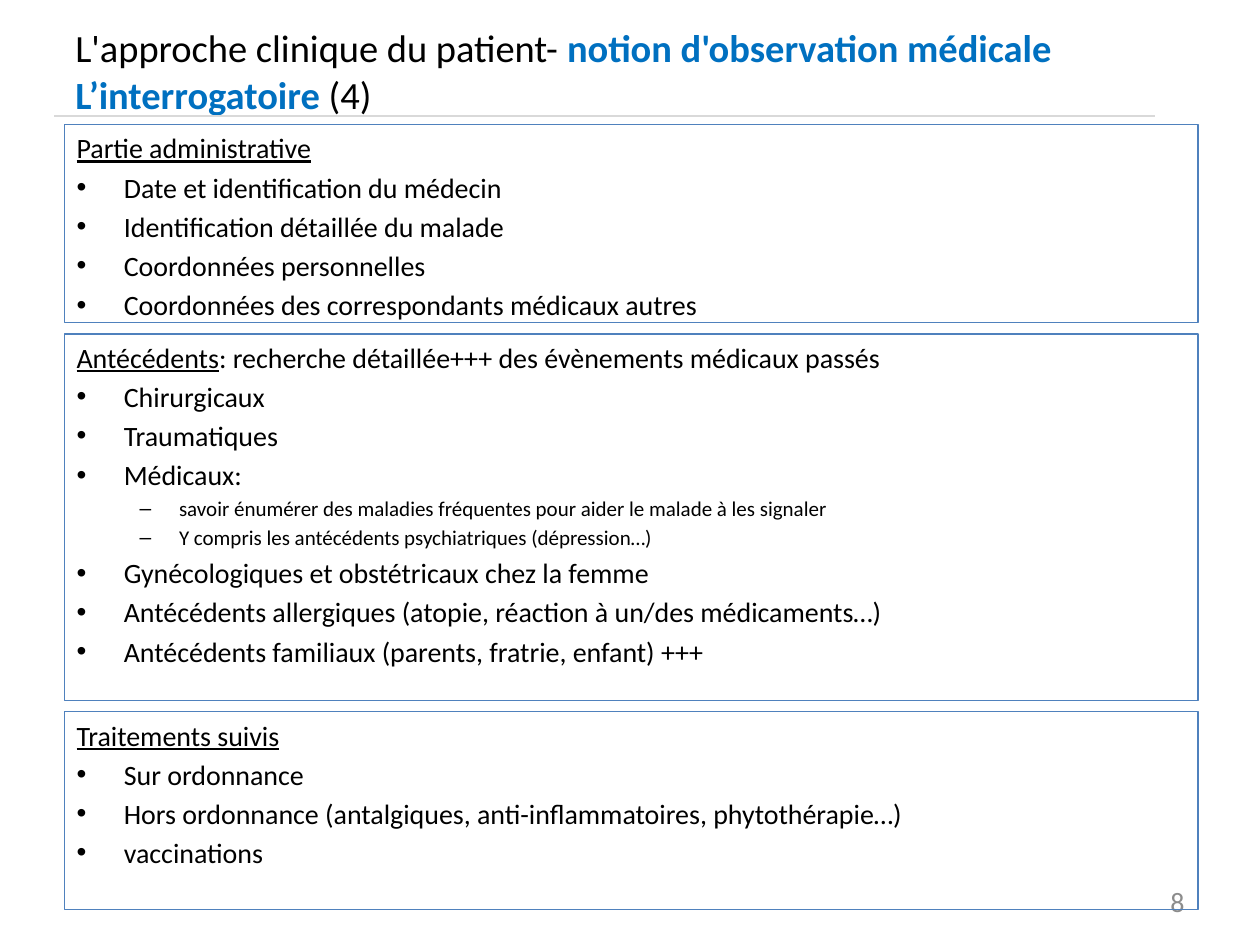
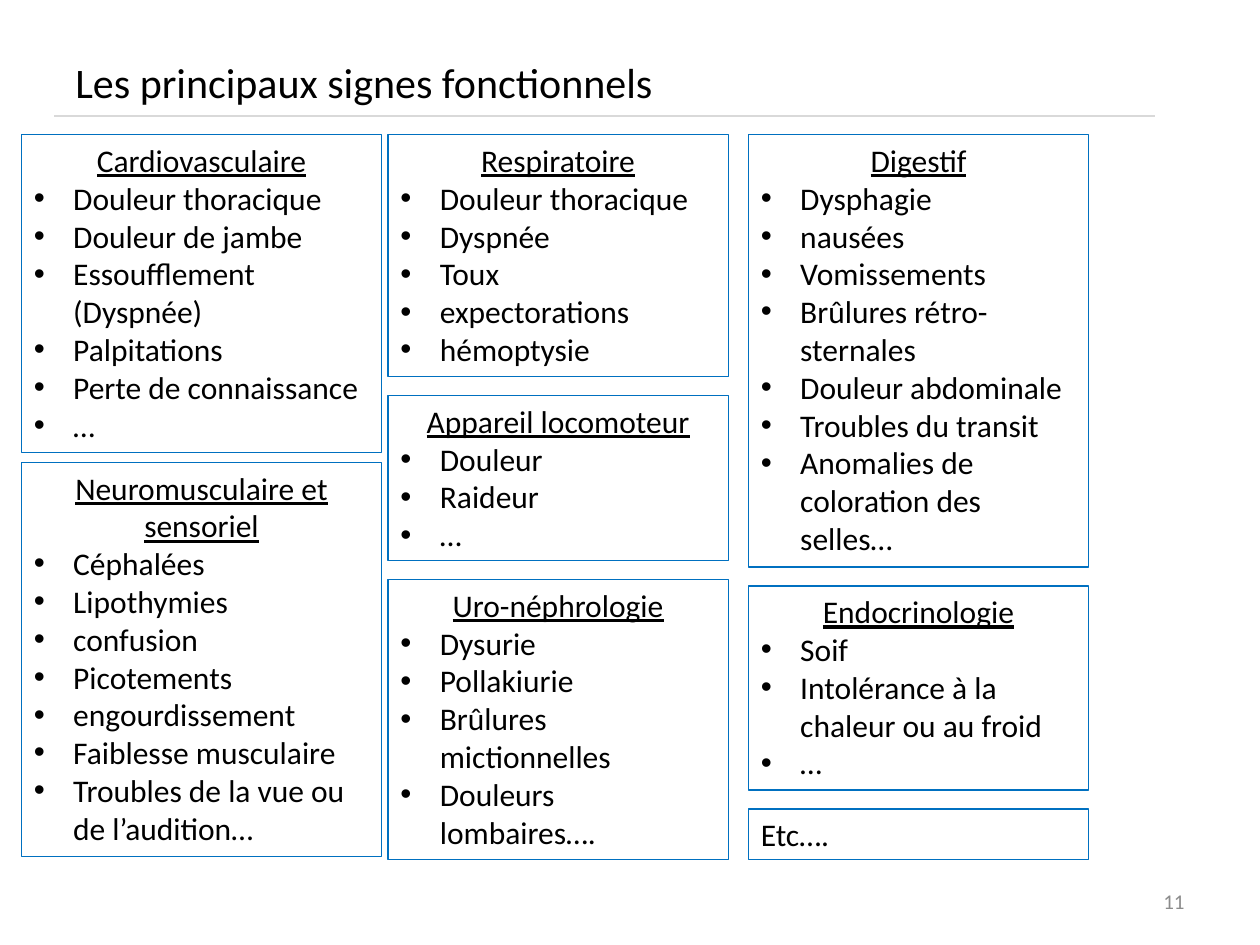
from dataclasses import dataclass

import lxml.etree
import pptx
import pptx.dml.color
import pptx.enum.shapes
import pptx.enum.text
import pptx.oxml.ns
import pptx.util

COLUMNS, ROWS = 100, 75
CELL = pptx.util.Inches(0.1)
FONT = "Calibri"
BLACK, ACCENT, RULE, NUMBER = "000000", "0070C0", "D9D9D9", "8C8C8C"
ALIGN = pptx.enum.text.PP_ALIGN
MIDDLE = pptx.enum.text.MSO_ANCHOR.MIDDLE


@dataclass
class Box:
    left: float
    top: float
    width: float
    height: float


@dataclass
class ListStyle:
    line_color: str
    size: int
    indent: float
    spacing: float
    heading_align: int
    grow: bool


INTERVIEW_STYLE = ListStyle("4F81BD", 16, 3.75, 0.2, ALIGN.LEFT, False)
SIGNS_STYLE = ListStyle(ACCENT, 18, 3.13, 0, ALIGN.CENTER, True)

INTERVIEW_SECTIONS = [
    (15.7, "Partie administrative", "", [
        "Date et identification du médecin",
        "Identification détaillée du malade",
        "Coordonnées personnelles",
        "Coordonnées des correspondants médicaux autres",
    ]),
    (29.1, "Antécédents", ": recherche détaillée+++ des évènements médicaux passés", [
        "Chirurgicaux",
        "Traumatiques",
        "Médicaux:",
        ("savoir énumérer des maladies fréquentes pour aider le malade à les signaler",
         "Y compris les antécédents psychiatriques (dépression…)"),
        "Gynécologiques et obstétricaux chez la femme",
        "Antécédents allergiques (atopie, réaction à un/des médicaments…)",
        "Antécédents familiaux (parents, fratrie, enfant) +++",
    ]),
    (15.7, "Traitements suivis", "", [
        "Sur ordonnance",
        "Hors ordonnance (antalgiques, anti-inflammatoires, phytothérapie…)",
        "vaccinations",
    ]),
]

SIGNS_COLUMNS = [
    (1.7, 28.6, 0.8, [
        (25.2, "Cardiovasculaire", "", [
            "Douleur thoracique", "Douleur de jambe", "Essoufflement (Dyspnée)",
            "Palpitations", "Perte de connaissance", "…"]),
        (31.3, "Neuromusculaire et sensoriel", "", [
            "Céphalées", "Lipothymies", "confusion", "Picotements", "engourdissement",
            "Faiblesse musculaire", "Troubles de la vue ou de l’audition…"]),
    ]),
    (30.8, 27, 1.5, [
        (19.2, "Respiratoire", "", [
            "Douleur thoracique", "Dyspnée", "Toux", "expectorations", "hémoptysie"]),
        (13.1, "Appareil locomoteur", "", ["Douleur", "Raideur", "…"]),
        (22.2, "Uro-néphrologie", "", [
            "Dysurie", "Pollakiurie", "Brûlures mictionnelles", "Douleurs lombaires…."]),
    ]),
    (59.4, 27, 1.5, [
        (34.3, "Digestif", "", [
            "Dysphagie", "nausées", "Vomissements", "Brûlures rétro-sternales",
            "Douleur abdominale", "Troubles du transit",
            "Anomalies de coloration des selles…"]),
        (16.2, "Endocrinologie", "", [
            "Soif", "Intolérance à la chaleur ou au froid", "…"]),
        (4, "", "Etc….", []),
    ]),
]


def cells(count):
    return round(count * CELL)


def color(hex_string):
    return pptx.dml.color.RGBColor.from_string(hex_string)


def set_font(font, size, hex_string):
    font.name = FONT
    font.size = pptx.util.Pt(size)
    font.color.rgb = color(hex_string)


def add_text_box(slide, box):
    shape = slide.shapes.add_textbox(
        cells(box.left), cells(box.top), cells(box.width), cells(box.height))
    shape.text_frame.word_wrap = True
    return shape


def add_title(slide, box, size, lines):
    frame = add_text_box(slide, box).text_frame
    frame.vertical_anchor = MIDDLE
    paragraph = frame.paragraphs[0]
    set_font(paragraph.font, size, BLACK)
    for index, line in enumerate(lines):
        if index:
            paragraph.add_line_break()
        for text, highlighted in line:
            run = paragraph.add_run()
            run.text = text
            if highlighted:
                run.font.bold = True
                run.font.color.rgb = color(ACCENT)


def add_title_rule(slide):
    rule = slide.shapes.add_connector(
        pptx.enum.shapes.MSO_CONNECTOR.STRAIGHT,
        cells(4.3), cells(9.2), cells(91.7), cells(9.2))
    rule.line.color.rgb = color(RULE)
    rule.line.width = pptx.util.Pt(1.5)
    properties = rule.element.find(pptx.oxml.ns.qn("p:spPr"))
    lxml.etree.SubElement(properties, pptx.oxml.ns.qn("a:effectLst"))


def add_slide_number(slide, number, size):
    frame = add_text_box(slide, Box(71.7, 69.5, 23.3, 4)).text_frame
    frame.vertical_anchor = MIDDLE
    paragraph = frame.paragraphs[0]
    paragraph.text = number
    paragraph.alignment = ALIGN.RIGHT
    set_font(paragraph.font, size, NUMBER)


def set_bullet(paragraph, character, margin, hanging):
    properties = paragraph._p.get_or_add_pPr()
    properties.set("marL", str(cells(margin)))
    properties.set("indent", str(-cells(hanging)))
    font = pptx.oxml.ns.qn("a:buFont")
    bullet = pptx.oxml.ns.qn("a:buChar")
    default = properties.find(pptx.oxml.ns.qn("a:defRPr"))
    position = len(properties) if default is None else properties.index(default)
    properties.insert(position, lxml.etree.Element(font, typeface="Arial"))
    properties.insert(position + 1, lxml.etree.Element(bullet, char=character))


def add_item(frame, text, style, nested=False):
    size = 12 if nested else style.size
    paragraph = frame.add_paragraph()
    paragraph.text = text
    paragraph.space_before = pptx.util.Pt(style.spacing * size)
    set_font(paragraph.font, size, BLACK)
    if nested:
        paragraph.level = 1
        set_bullet(paragraph, "–", 8.13, 3.13)
    else:
        set_bullet(paragraph, "•", style.indent, style.indent)


def add_list_box(slide, box, style, heading, remark, items):
    shape = add_text_box(slide, box)
    shape.line.color.rgb = color(style.line_color)
    shape.line.width = pptx.util.Pt(0.75)
    frame = shape.text_frame
    if style.grow:
        frame.auto_size = pptx.enum.text.MSO_AUTO_SIZE.SHAPE_TO_FIT_TEXT
    paragraph = frame.paragraphs[0]
    paragraph.space_before = pptx.util.Pt(style.spacing * style.size)
    set_font(paragraph.font, style.size, BLACK)
    if heading:
        paragraph.alignment = style.heading_align
        run = paragraph.add_run()
        run.text = heading
        run.font.underline = True
    if remark:
        paragraph.add_run().text = remark
    for item in items:
        if isinstance(item, tuple):
            for text in item:
                add_item(frame, text, style, nested=True)
        else:
            add_item(frame, item, style)


def add_stack(slide, left, top, width, gap, style, sections):
    for height, heading, remark, items in sections:
        add_list_box(slide, Box(left, top, width, height), style, heading, remark, items)
        top += height + gap


def add_base_slide(presentation, title_box, title_size, title_lines, number, number_size):
    slide = presentation.slides.add_slide(presentation.slide_layouts[6])
    add_title(slide, title_box, title_size, title_lines)
    add_title_rule(slide)
    add_slide_number(slide, number, number_size)
    return slide


def build_interview_slide(presentation):
    title_lines = [
        [("L'approche clinique du patient- ", False),
         ("notion d'observation médicale ", True)],
        [("L’interrogatoire", True), (" (4)", False)],
    ]
    slide = add_base_slide(presentation, Box(5, 0.5, 90, 10.2), 22, title_lines, "8", 16)
    add_stack(slide, 5.1, 9.9, 90, 0.9, INTERVIEW_STYLE, INTERVIEW_SECTIONS)


def build_signs_slide(presentation):
    title_lines = [[("Les principaux signes fonctionnels", False)]]
    slide = add_base_slide(presentation, Box(5, 3, 90, 6.9), 24, title_lines, "11", 12)
    for left, width, gap, sections in SIGNS_COLUMNS:
        add_stack(slide, left, 10.7, width, gap, SIGNS_STYLE, sections)


def main():
    presentation = pptx.Presentation()
    presentation.slide_width = cells(COLUMNS)
    presentation.slide_height = cells(ROWS)
    build_interview_slide(presentation)
    build_signs_slide(presentation)
    presentation.save("out.pptx")


if __name__ == "__main__":
    main()
